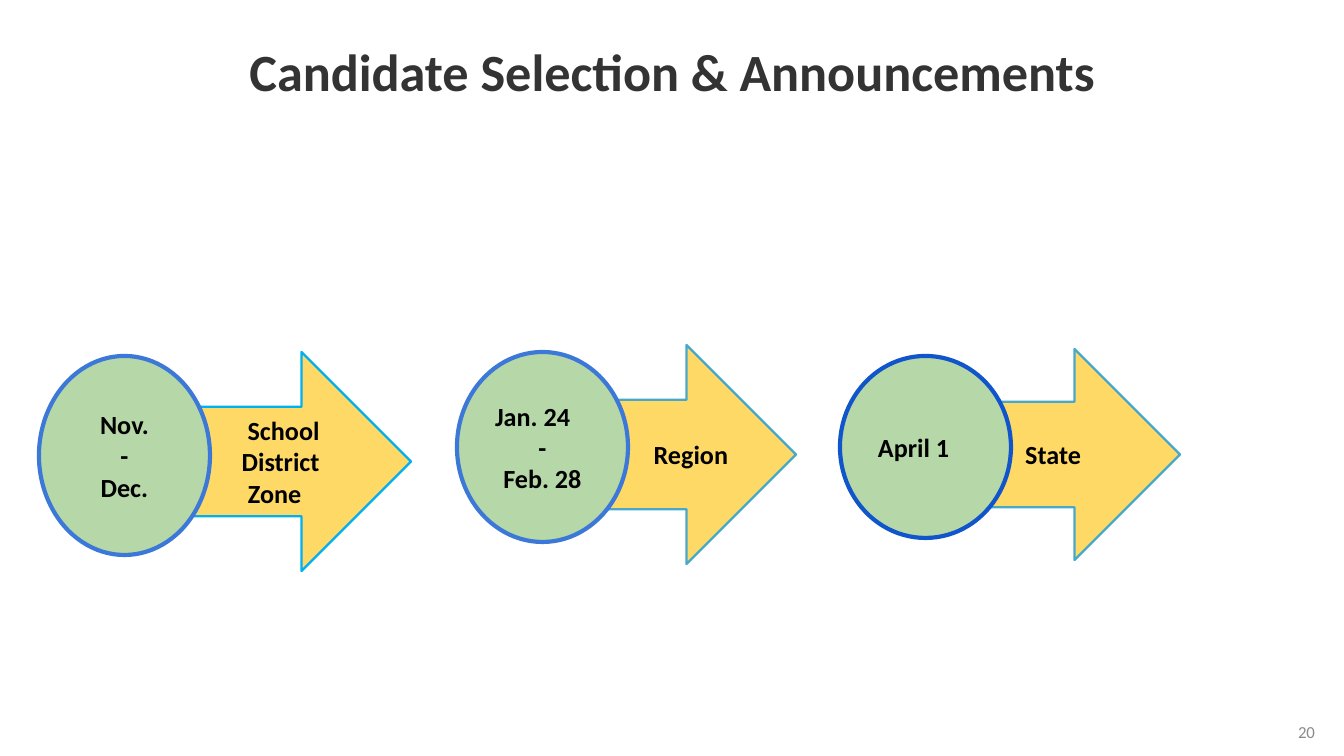
import pptx
import pptx.dml.color
import pptx.enum.shapes
import pptx.enum.text
import pptx.util

RGBColor = pptx.dml.color.RGBColor
MSO_SHAPE = pptx.enum.shapes.MSO_SHAPE
PP_ALIGN = pptx.enum.text.PP_ALIGN

PX = 914400 / 134.4  # EMU in one px
BLACK = RGBColor(0x00, 0x00, 0x00)
TITLE_GRAY = RGBColor(0x33, 0x33, 0x33)
NUMBER_GRAY = RGBColor(0x8A, 0x8A, 0x8A)
YELLOW = RGBColor(0xFF, 0xD9, 0x66)
GREEN = RGBColor(0xB6, 0xD7, 0xA8)
CYAN = RGBColor(0x00, 0xB0, 0xF0)
TEAL = RGBColor(0x47, 0xA8, 0xCA)
BLUE = RGBColor(0x3C, 0x78, 0xD8)
DARK_BLUE = RGBColor(0x11, 0x55, 0xCC)
LEFT, CENTER, RIGHT = PP_ALIGN.LEFT, PP_ALIGN.CENTER, PP_ALIGN.RIGHT


def px(*lengths):
    return [pptx.util.Emu(round(length * PX)) for length in lengths]


def write(shape, lines, size=14, color=BLACK, bold=True):
    """Fill a shape with one paragraph per (text, alignment, indent in px)."""
    frame = shape.text_frame
    frame.word_wrap = True
    frame.vertical_anchor = pptx.enum.text.MSO_ANCHOR.MIDDLE
    frame.margin_left, frame.margin_right, frame.margin_top, frame.margin_bottom = px(13, 13, 13, 13)
    for index, (text, alignment, indent) in enumerate(lines):
        paragraph = frame.paragraphs[0] if index == 0 else frame.add_paragraph()
        paragraph.alignment = alignment
        if indent:
            paragraph._p.get_or_add_pPr().set("marL", str(px(indent)[0]))
        run = paragraph.add_run()
        run.text = text
        run.font.name = "Calibri"
        run.font.size = pptx.util.Pt(size)
        run.font.bold = bold
        run.font.color.rgb = color


presentation = pptx.Presentation()
presentation.slide_width, presentation.slide_height = px(1344, 756)
slide = presentation.slides.add_slide(presentation.slide_layouts[6])

title = slide.shapes.add_textbox(*px(0, -3, 1344, 155))
write(title, [("Candidate Selection & Announcements", CENTER, 0)], 28, TITLE_GRAY)
title.text_frame.paragraphs[0].line_spacing = 0.9

page_number = slide.shapes.add_textbox(*px(1000, 706, 328, 51))
write(page_number, [("20", RIGHT, 0)], 9, NUMBER_GRAY, False)

# Left, top, width, height, outline, lines of text
arrows = [
    (187, 352, 224, 219, CYAN,
     [("School", CENTER, 24), ("District", CENTER, 18), ("Zone", CENTER, 6)]),
    (572, 345, 224, 219, TEAL, [("Region", RIGHT, 0)]),
    (956, 349, 224, 211, TEAL, [("State", CENTER, 23)]),
]
dates = [
    (39, 356, 171, 199, BLUE,
     [("Nov.", CENTER, 0), ("-", CENTER, 0), ("Dec.", CENTER, 0)]),
    (457, 352, 171, 190, BLUE,
     [("Jan. 24", LEFT, 0), ("-", CENTER, 0), ("Feb. 28", CENTER, 0)]),
    (840, 356, 171, 182, DARK_BLUE, [("April 1", LEFT, 0)]),
]

for kind, fill, line_width, items in (
    (MSO_SHAPE.RIGHT_ARROW, YELLOW, 1.25, arrows),
    (MSO_SHAPE.OVAL, GREEN, 2.25, dates),
):
    for left, top, width, height, outline, lines in items:
        shape = slide.shapes.add_shape(kind, *px(left, top, width, height))
        shape.shadow.inherit = False
        shape.fill.solid()
        shape.fill.fore_color.rgb = fill
        shape.line.color.rgb = outline
        shape.line.width = pptx.util.Pt(line_width)
        write(shape, lines)

presentation.save("out.pptx")
